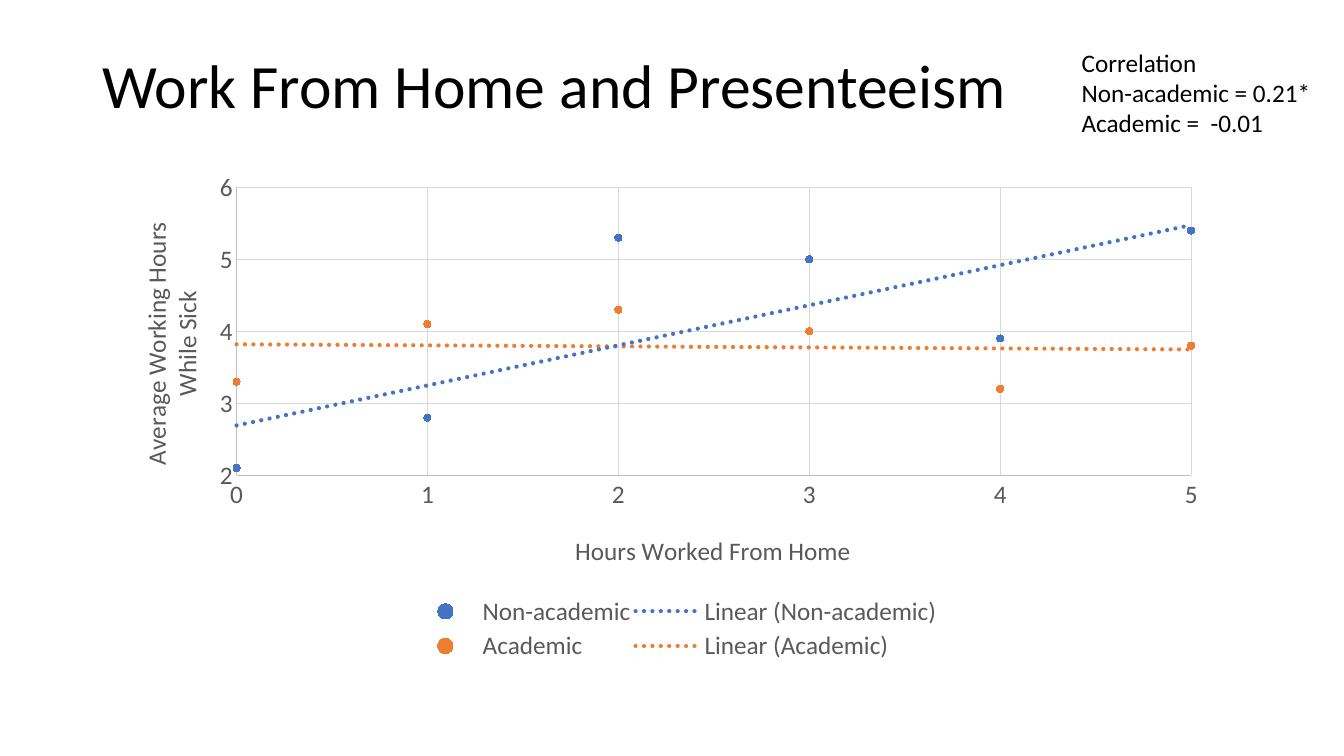
"""Slide on working from home and presenteeism, with a scatter chart and trend lines."""
from dataclasses import dataclass

from lxml import etree
from pptx import Presentation
from pptx.chart.data import XyChartData
from pptx.dml.color import RGBColor
from pptx.enum.chart import (XL_CHART_TYPE, XL_LEGEND_POSITION, XL_MARKER_STYLE,
                             XL_TICK_MARK)
from pptx.enum.text import MSO_ANCHOR, PP_ALIGN
from pptx.oxml import parse_xml
from pptx.oxml.ns import nsdecls, qn
from pptx.util import Inches, Pt

SCATTER = XL_CHART_TYPE.XY_SCATTER
BOTTOM = XL_LEGEND_POSITION.BOTTOM
CIRCLE = XL_MARKER_STYLE.CIRCLE
NO_TICK = XL_TICK_MARK.NONE
TOP, MIDDLE = MSO_ANCHOR.TOP, MSO_ANCHOR.MIDDLE
CENTER = PP_ALIGN.CENTER


@dataclass(frozen=True)
class Theme:
    """Font, type sizes and colours of the slide."""
    font: str = "Calibri"
    title: int = 44
    body: int = 18
    text: str = "000000"
    muted: str = "595959"
    axis: str = "BFBFBF"
    grid: str = "D9D9D9"
    series: tuple = ("4472C4", "ED7D31")


THEME = Theme()
HOURS = range(6)
SICK_HOURS = {
    "Non-academic": (2.1, 2.8, 5.3, 5, 3.9, 5.4),
    "Academic": (3.3, 4.1, 4.3, 4, 3.2, 3.8),
}


def set_all(target, values):
    """Set each attribute of target from a dict."""
    for name, value in values.items():
        setattr(target, name, value)


def style_font(font, size, color):
    """Apply the theme font with a size and colour."""
    set_all(font, {"name": THEME.font, "size": Pt(size), "bold": False})
    font.color.rgb = RGBColor.from_string(color)


def style_line(line, color):
    """Give a line a colour and the thin chart width."""
    line.color.rgb = RGBColor.from_string(color)
    line.width = Pt(0.75)


def add_text(s, box, lines, size, anchor=TOP, spacing=1.0):
    """Add a text box with one paragraph per line."""
    tf = s.shapes.add_textbox(*map(Inches, box)).text_frame
    set_all(tf, {"word_wrap": True, "vertical_anchor": anchor, "text": "\n".join(lines)})
    for p in tf.paragraphs:
        p.line_spacing = spacing
        style_font(p.font, size, THEME.text)


def place(element, before, x, y, w=None, h=None):
    """Set a manual layout, in fractions of the chart, on a chart part."""
    for old in element.findall(qn("c:layout")):
        element.remove(old)
    layout = etree.Element(qn("c:layout"))
    manual = etree.SubElement(layout, qn("c:manualLayout"))
    values = {"xMode": "edge", "yMode": "edge", "x": x, "y": y, "w": w, "h": h}
    if before is None:
        values = {"layoutTarget": "inner", **values}
    for name, value in values.items():
        if value is not None:
            etree.SubElement(manual, qn(f"c:{name}"), val=str(value))
    if before is None:
        element.insert(0, layout)
    else:
        element.find(qn(before)).addprevious(layout)


def style_axis(axis, title, low, high, x, y):
    """Format an axis with its scale, grid and placed title."""
    set_all(axis, {"minimum_scale": low, "maximum_scale": high, "major_unit": 1,
                   "major_tick_mark": NO_TICK, "minor_tick_mark": NO_TICK,
                   "has_major_gridlines": True, "has_title": True})
    style_line(axis.format.line, THEME.axis)
    style_line(axis.major_gridlines.format.line, THEME.grid)
    style_font(axis.tick_labels.font, THEME.body, THEME.muted)
    set_all(axis.tick_labels, {"number_format": "General", "number_format_is_linked": False})
    tf = axis.axis_title.text_frame
    tf.text = title
    for p in tf.paragraphs:
        p.alignment = CENTER
        style_font(p.font, THEME.body, THEME.muted)
    place(axis.axis_title._element, "c:overlay", x, y)


def style_series(series, color):
    """Show a series as dots with a dotted linear trend line."""
    series.format.line.fill.background()
    set_all(series.marker, {"style": CIRCLE, "size": 5})
    rgb = RGBColor.from_string(color)
    series.marker.format.fill.solid()
    series.marker.format.fill.fore_color.rgb = rgb
    series.marker.format.line.color.rgb = rgb
    trend = parse_xml(
        f'<c:trendline {nsdecls("c", "a")}><c:spPr><a:ln w="{Pt(3)}" cap="rnd">'
        f'<a:solidFill><a:srgbClr val="{color}"/></a:solidFill>'
        '<a:prstDash val="sysDot"/></a:ln></c:spPr><c:trendlineType val="linear"/>'
        '<c:dispRSqr val="0"/><c:dispEq val="0"/></c:trendline>')
    series._element.find(qn("c:xVal")).addprevious(trend)


def add_scatter(s, box):
    """Add the scatter chart with its axes, trend lines and legend."""
    data = XyChartData()
    for name, values in SICK_HOURS.items():
        series = data.add_series(name)
        for point in zip(HOURS, values):
            series.add_data_point(*point)
    chart = s.shapes.add_chart(SCATTER, *map(Inches, box), data).chart
    set_all(chart, {"has_title": False, "has_legend": True})
    style_font(chart.font, THEME.body, THEME.text)
    style_axis(chart.category_axis, "Hours Worked From Home", 0, 5, 0.416, 0.73)
    style_axis(chart.value_axis, "Average Working Hours\nWhile Sick", 2, 6, 0.025, 0.115)
    plot = chart.plots[0]
    plot.vary_by_categories = False
    for series, color in zip(plot.series, THEME.series):
        style_series(series, color)
    set_all(chart.legend, {"position": BOTTOM, "include_in_layout": False})
    style_font(chart.legend.font, THEME.body, THEME.muted)
    place(chart.legend._element, "c:overlay", 0.27, 0.855, 0.48, 0.145)
    place(chart._chartSpace.chart.plotArea, None, 0.115, 0.052, 0.86, 0.571)


def main():
    """Build the slide and save it."""
    prs = Presentation()
    set_all(prs, {"slide_width": Inches(13.33), "slide_height": Inches(7.5)})
    s = prs.slides.add_slide(prs.slide_layouts[6])
    add_text(s, (0.92, 0.15, 11.5, 1.45), ["Work From Home and Presenteeism"],
             THEME.title, MIDDLE, 0.9)
    add_text(s, (10.63, 0.42, 2.7, 1.01),
             ["Correlation", "Non-academic = 0.21*", "Academic =  -0.01"], THEME.body)
    add_scatter(s, (1.08, 1.6, 11.01, 5))
    prs.save("out.pptx")


if __name__ == "__main__":
    main()
